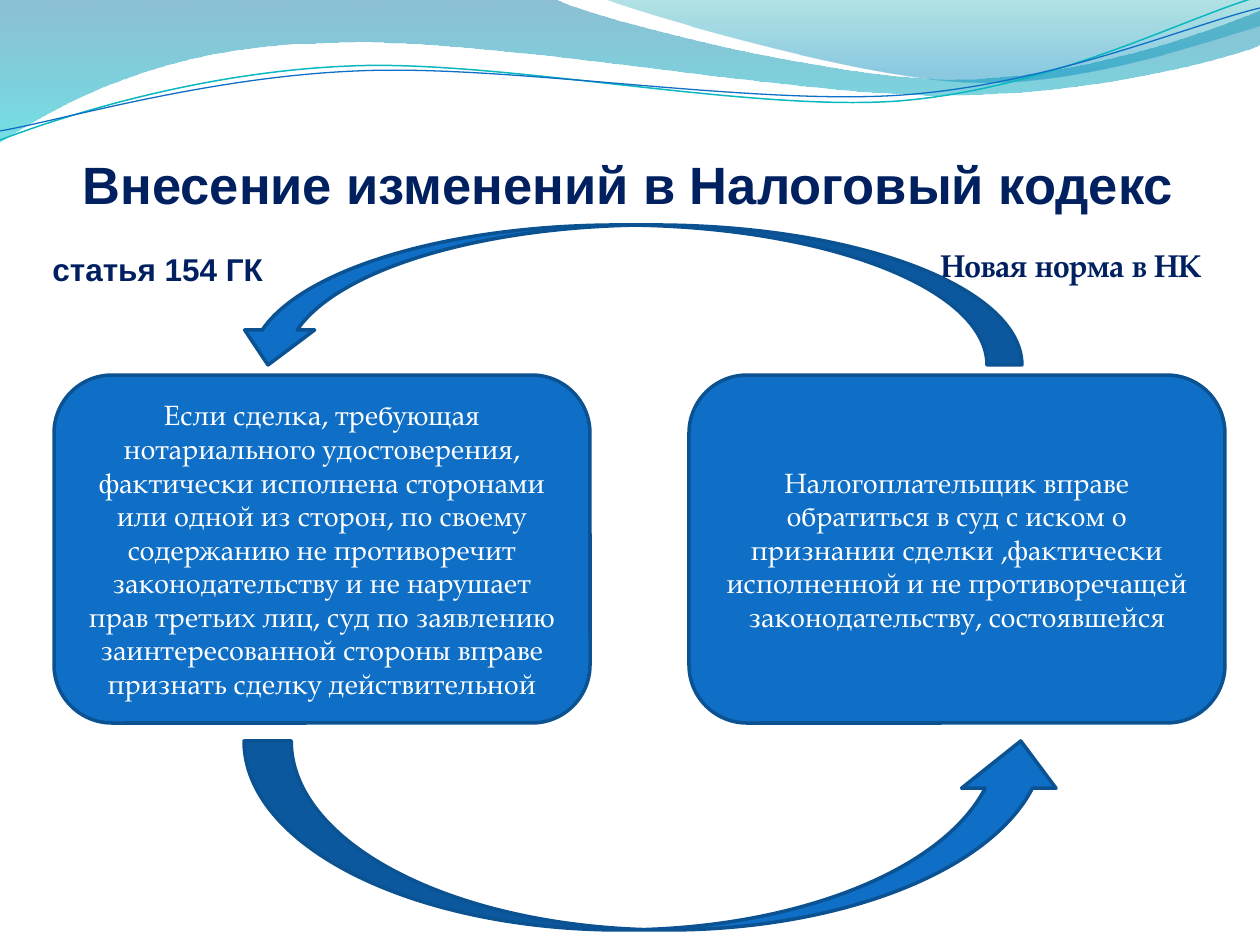
from lxml.etree import SubElement
from pptx import Presentation
from pptx.dml.color import RGBColor
from pptx.enum.shapes import MSO_SHAPE
from pptx.enum.text import MSO_ANCHOR, MSO_AUTO_SIZE, PP_ALIGN
from pptx.oxml.ns import qn
from pptx.util import Pt

EMU_PER_PX = 914400 / 126
COLORS = {
    "white": "FFFFFF", "navy": "002060", "blue": "0F6FC6", "edge": "0B5292",
    "aqua": "0AB8BF", "deep": "0074A1", "cyan": "00C6CF",
    "teal": "00A1A9", "sky": "008BBF",
}
SANS, SERIF = "Arial", "TeX Gyre Pagella"
HEADING = {"name": SANS, "size": Pt(30), "bold": True}
LABEL = {"size": Pt(18), "bold": True}
BODY = {"name": SERIF, "size": Pt(16), "bold": False}


def px(value):
    return round(value * EMU_PER_PX)


def color(name):
    return RGBColor.from_string(COLORS[name])


def write(frame, text, font, color_name, align=PP_ALIGN.LEFT):
    para = frame.paragraphs[0]
    para.alignment = align
    span = para.add_run()
    span.text = text
    for key, value in font.items():
        setattr(span.font, key, value)
    span.font.color.rgb = color(color_name)


def outline(shape, color_name, width):
    shape.shadow.inherit = False
    shape.line.color.rgb = color(color_name)
    shape.line.width = Pt(width)


def add_curve(page, left, top, segments, close):
    """Segments hold one point for a straight line, three for a Bezier curve."""
    points = [(px(left + x), px(top + y)) for segment in segments for x, y in segment]
    builder = page.shapes.build_freeform(*points[0])
    builder.add_line_segments(points[1:], close=close)
    shape = builder.convert_to_shape()
    shape.shadow.inherit = False
    # Join each three-point run of lines into one Bezier curve
    lines = iter(list(shape._element.spPr.iter(qn("a:lnTo"))))
    for segment in segments[1:]:
        first, *others = [next(lines) for _ in segment]
        if others:
            curve = SubElement(first.getparent(), qn("a:cubicBezTo"))
            first.addprevious(curve)
            for line in (first, *others):
                curve.append(line[0])
                line.getparent().remove(line)
    return shape


def shade(shape, stops):
    shape.line.fill.background()
    shape.fill.gradient()
    shape.fill.gradient_angle = 270
    for stop, (position, name, _) in zip(shape.fill.gradient_stops, stops):
        stop.position = position
        stop.color.rgb = color(name)
    # Opacity of each gradient stop
    for node, (_, _, opacity) in zip(shape._element.spPr.iter(qn("a:srgbClr")), stops):
        SubElement(node, qn("a:alpha")).set("val", str(opacity * 1000))


def add_waves(page, left, top):
    bands = [
        ([[(0, 0)], [(554, -1)],
          [(600, 21), (837, 79), (955, 79)], [(1074, 79), (1207, 33), (1260, 11)],
          [(1261, 45)],
          [(1239, 55), (1096, 96), (940, 95)], [(784, 95), (481, 35), (324, 43)],
          [(163, 45), (58, 105), (-1, 142)]],
         [(0, "deep", 45), (1, "cyan", 55)]),
        ([[(604, -1)],
          [(641, 14), (859, 78), (969, 82)], [(1079, 87), (1211, 40), (1260, 26)],
          [(1260, 0)]],
         [(0, "teal", 30), (0.8, "sky", 45)]),
    ]
    for segments, stops in bands:
        shade(add_curve(page, left, top, segments, True), stops)

    strands = [
        ([[(0, 140)], [(60, 117), (199, 72), (349, 66)],
          [(498, 59), (747, 112), (898, 101)], [(1050, 89), (1182, 19), (1257, -3)]],
         "aqua", 0.85),
        ([[(0, 131)], [(59, 121), (207, 77), (357, 71)],
          [(508, 64), (752, 106), (903, 95)], [(1053, 84), (1186, 26), (1260, 8)]],
         "blue", 0.75),
    ]
    for segments, name, width in strands:
        strand = add_curve(page, left, top, segments, False)
        strand.fill.background()
        outline(strand, name, width)


def add_title(page, left, top, width, height, text):
    title = page.shapes.title
    title.left, title.top, title.width, title.height = map(px, (left, top, width, height))
    frame = title.text_frame
    frame.auto_size = MSO_AUTO_SIZE.NONE
    frame.vertical_anchor = MSO_ANCHOR.TOP
    write(frame, text, HEADING, "navy")


def add_label(page, left, top, width, height, text, face):
    label = page.shapes.add_textbox(*map(px, (left, top, width, height)))
    label.text_frame.word_wrap = False
    write(label.text_frame, text, {**LABEL, "name": face}, "navy")


def add_block(page, kind, left, top, width, height):
    block = page.shapes.add_shape(kind, *map(px, (left, top, width, height)))
    block.fill.solid()
    block.fill.fore_color.rgb = color("blue")
    outline(block, "edge", 2)
    return block


def add_card(page, left, top, width, height, text):
    card = add_block(page, MSO_SHAPE.ROUNDED_RECTANGLE, left, top, width, height)
    card.text_frame.word_wrap = True
    card.text_frame.vertical_anchor = MSO_ANCHOR.MIDDLE
    write(card.text_frame, text, BODY, "white", PP_ALIGN.CENTER)


def add_cycle(page, left, top):
    """Two labelled cards joined by a curved arrow below and another above."""
    add_card(page, left, top + 150, 536, 348,
             "Если сделка, требующая нотариального удостоверения, фактически исполнена "
             "сторонами или одной из сторон, по своему содержанию не противоречит "
             "законодательству и не нарушает прав третьих лиц, суд по заявлению "
             "заинтересованной стороны вправе признать сделку действительной")
    add_label(page, left - 14, top + 19, 239, 50, "статья 154 ГК", SANS)
    add_card(page, left + 635, top + 150, 536, 348,
             "Налогоплательщик вправе обратиться в суд с иском о признании сделки "
             ",фактически исполненной и не противоречащей законодательству, состоявшейся")
    add_block(page, MSO_SHAPE.CURVED_UP_ARROW, left + 190, top + 516, 824, 189)
    add_label(page, left + 874, top + 15, 309, 50, "Новая норма в НК", SERIF)
    back = add_block(page, MSO_SHAPE.CURVED_DOWN_ARROW, left + 179, top, 789, 140)
    back._element.spPr.find(qn("a:xfrm")).set("flipH", "1")


def main():
    deck = Presentation()
    deck.slide_width, deck.slide_height = px(1260), px(945)
    page = deck.slides.add_slide(deck.slide_layouts[5])
    add_waves(page, 0, 0)
    add_title(page, 70, 146, 1142, 77, "Внесение изменений в Налоговый кодекс")
    add_cycle(page, 54, 225)
    deck.save("out.pptx")


if __name__ == "__main__":
    main()
